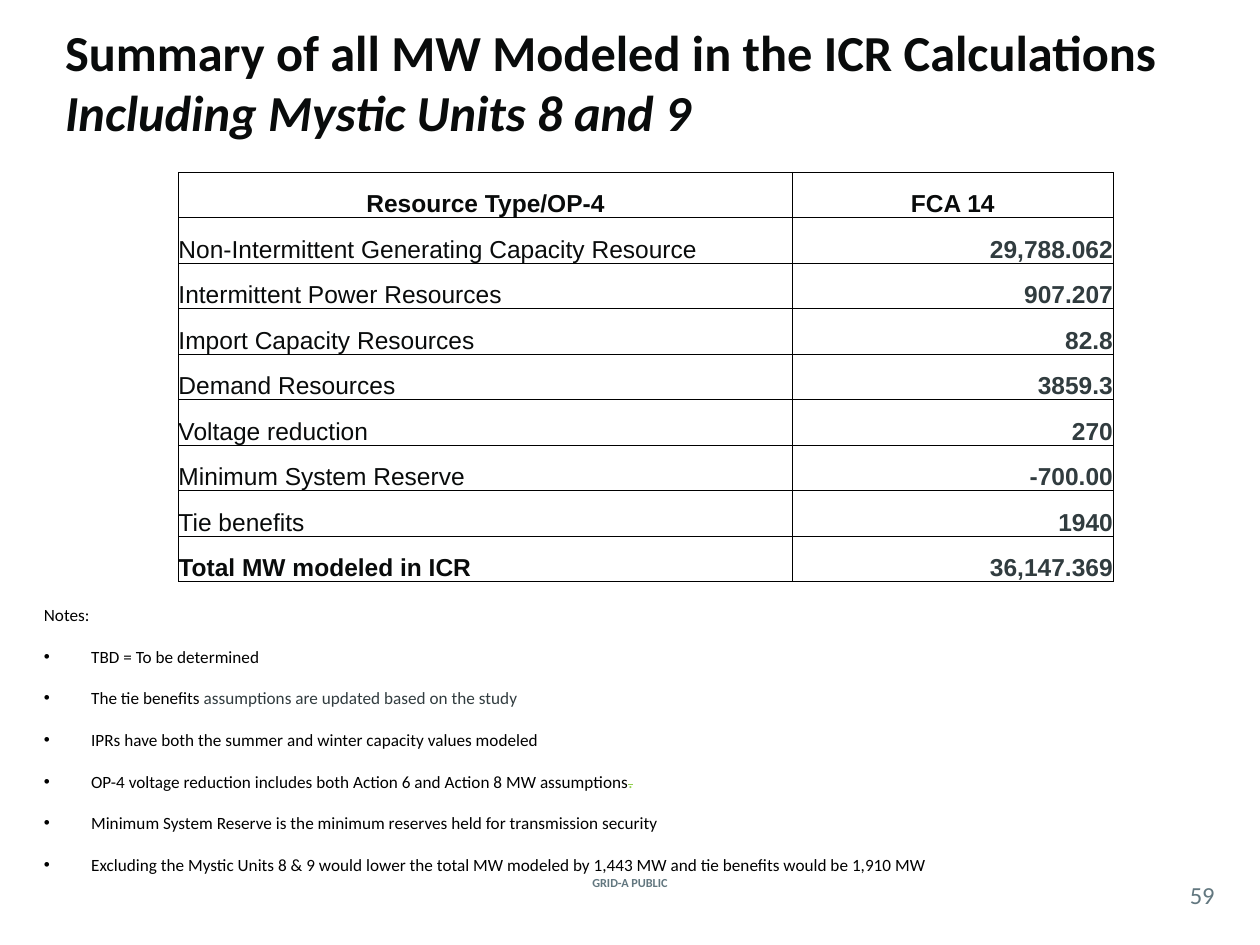
"""Build the slide summarising all MW modeled in the ICR calculations."""
from typing import NamedTuple

from lxml import etree
from pptx import Presentation
from pptx.dml.color import RGBColor
from pptx.enum.text import MSO_ANCHOR, MSO_AUTO_SIZE, PP_ALIGN
from pptx.oxml.ns import qn
from pptx.util import Pt

LEFT, CENTER, RIGHT = PP_ALIGN.LEFT, PP_ALIGN.CENTER, PP_ALIGN.RIGHT
TOP, MIDDLE, BOTTOM = MSO_ANCHOR.TOP, MSO_ANCHOR.MIDDLE, MSO_ANCHOR.BOTTOM
NO_AUTOFIT = MSO_AUTO_SIZE.NONE
BLACK = RGBColor(0x00, 0x00, 0x00)
INK = RGBColor(0x09, 0x0B, 0x0B)
SLATE = RGBColor(0x31, 0x3C, 0x3F)
GRAY = RGBColor(0x62, 0x77, 0x7F)
GREEN = RGBColor(0x92, 0xD0, 0x50)
BODY_FONT, TABLE_FONT = "Calibri", "Arial"
COLUMN_WIDTHS = (351, 183)
ROW_HEIGHT = 26
HANGING_INDENT = 27


class Box(NamedTuple):
    left: float
    top: float
    width: float
    height: float


class Resource(NamedTuple):
    name: str
    megawatts: str
    is_total: bool = False


class Note(NamedTuple):
    text: str
    tail: str = ""
    tail_color: RGBColor = BLACK
    strike_tail: bool = False
    bullet: bool = True


RESOURCES = (
    Resource("Non-Intermittent Generating Capacity Resource", "29,788.062"),
    Resource("Intermittent Power Resources", "907.207"),
    Resource("Import Capacity Resources", "82.8"),
    Resource("Demand Resources", "3859.3"),
    Resource("Voltage reduction", "270"),
    Resource("Minimum System Reserve", "-700.00"),
    Resource("Tie benefits", "1940"),
    Resource("Total MW modeled in ICR", "36,147.369", is_total=True),
)
NOTES = (
    Note("Notes:", bullet=False),
    Note("TBD = To be determined"),
    Note("The tie benefits ", "assumptions are updated based on the study", SLATE),
    Note("IPRs have both the summer and winter capacity values modeled"),
    Note("OP-4 voltage reduction includes both Action 6 and Action 8 MW assumptions",
         ".", GREEN, strike_tail=True),
    Note("Minimum System Reserve is the minimum reserves held for transmission security"),
    Note("Excluding the Mystic Units 8 & 9 would lower the total MW modeled by "
         "1,443 MW and tie benefits would be 1,910 MW"),
)


def set_font(font, name: str, size: float, color: RGBColor, bold: bool = False) -> None:
    font.name, font.size, font.bold = name, Pt(size), bold
    font.color.rgb = color


def add_text_box(slide, box: Box):
    text_frame = slide.shapes.add_textbox(*map(Pt, box)).text_frame
    text_frame.word_wrap = True
    return text_frame


def add_label(slide, box: Box, text: str, size: float, bold: bool = False) -> None:
    text_frame = add_text_box(slide, box)
    text_frame.vertical_anchor = MIDDLE
    text_frame.margin_left = text_frame.margin_right = 0
    text_frame.margin_top = text_frame.margin_bottom = 0
    paragraph = text_frame.paragraphs[0]
    paragraph.text, paragraph.alignment = text, CENTER
    set_font(paragraph.font, BODY_FONT, size, GRAY, bold)


def format_title(slide, box: Box) -> None:
    title = slide.shapes.title
    title.left, title.top, title.width, title.height = map(Pt, box)
    text_frame = title.text_frame
    text_frame.auto_size, text_frame.vertical_anchor = NO_AUTOFIT, TOP
    text_frame.margin_top = 0
    paragraph = text_frame.paragraphs[0]
    paragraph.alignment = LEFT
    paragraph.add_run().text = "Summary of all MW Modeled in the ICR Calculations "
    subtitle = paragraph.add_run()
    subtitle.text, subtitle.font.italic = "Including Mystic Units 8 and 9", True
    set_font(paragraph.font, BODY_FONT, 28.8, INK, bold=True)


def add_borders(cell) -> None:
    properties = cell._tc.get_or_add_tcPr()
    for side in ("a:lnL", "a:lnR", "a:lnT", "a:lnB"):
        line = etree.SubElement(properties, qn(side), w=str(Pt(0.5)))
        fill = etree.SubElement(line, qn("a:solidFill"))
        etree.SubElement(fill, qn("a:srgbClr"), val=str(BLACK))


def fill_cell(cell, text: str, alignment: PP_ALIGN, color: RGBColor, bold: bool) -> None:
    add_borders(cell)
    cell.fill.background()
    cell.vertical_anchor = BOTTOM
    cell.margin_left = cell.margin_right = cell.margin_top = cell.margin_bottom = 0
    paragraph = cell.text_frame.paragraphs[0]
    paragraph.text, paragraph.alignment = text, alignment
    set_font(paragraph.font, TABLE_FONT, 14, color, bold)


def add_resource_table(slide, left: float, top: float) -> None:
    row_count = len(RESOURCES) + 1
    box = Box(left, top, sum(COLUMN_WIDTHS), ROW_HEIGHT * row_count)
    table = slide.shapes.add_table(row_count, len(COLUMN_WIDTHS), *map(Pt, box)).table
    table.first_row = table.horz_banding = False
    for column, width in zip(table.columns, COLUMN_WIDTHS):
        column.width = Pt(width)
    for index, heading in enumerate(("Resource Type/OP-4", "FCA 14")):
        fill_cell(table.cell(0, index), heading, CENTER, INK, True)
    for row, resource in enumerate(RESOURCES, start=1):
        fill_cell(table.cell(row, 0), resource.name, LEFT, INK, resource.is_total)
        fill_cell(table.cell(row, 1), resource.megawatts, RIGHT, SLATE, True)


def add_note(paragraph, note: Note) -> None:
    properties = paragraph._p.get_or_add_pPr()
    properties.set("marL", str(Pt(HANGING_INDENT)))
    properties.set("indent", str(-Pt(HANGING_INDENT)))
    if note.bullet:
        etree.SubElement(properties, qn("a:buFont"), typeface="Arial")
        etree.SubElement(properties, qn("a:buChar"), char="•")
        paragraph.space_before = Pt(12)
    set_font(paragraph.font, BODY_FONT, 9.8, BLACK)
    paragraph.add_run().text = note.text
    if note.tail:
        tail = paragraph.add_run()
        tail.text, tail.font.color.rgb = note.tail, note.tail_color
        if note.strike_tail:
            tail._r.get_or_add_rPr().set("strike", "sngStrike")


def add_notes(slide, box: Box) -> None:
    text_frame = add_text_box(slide, box)
    for index, note in enumerate(NOTES):
        add_note(text_frame.add_paragraph() if index else text_frame.paragraphs[0], note)


def main() -> None:
    presentation = Presentation()
    presentation.slide_width, presentation.slide_height = Pt(720), Pt(540)
    slide = presentation.slides.add_slide(presentation.slide_layouts[5])
    add_label(slide, Box(307.5, 498.5, 105, 12), "GRID-A PUBLIC", 7, bold=True)
    format_title(slide, Box(30, 12, 648, 90))
    add_notes(slide, Box(18, 342, 654, 150))
    add_label(slide, Box(672, 501, 30, 21), "59", 14)
    add_resource_table(slide, 102, 98.5)
    presentation.save("out.pptx")


if __name__ == "__main__":
    main()
